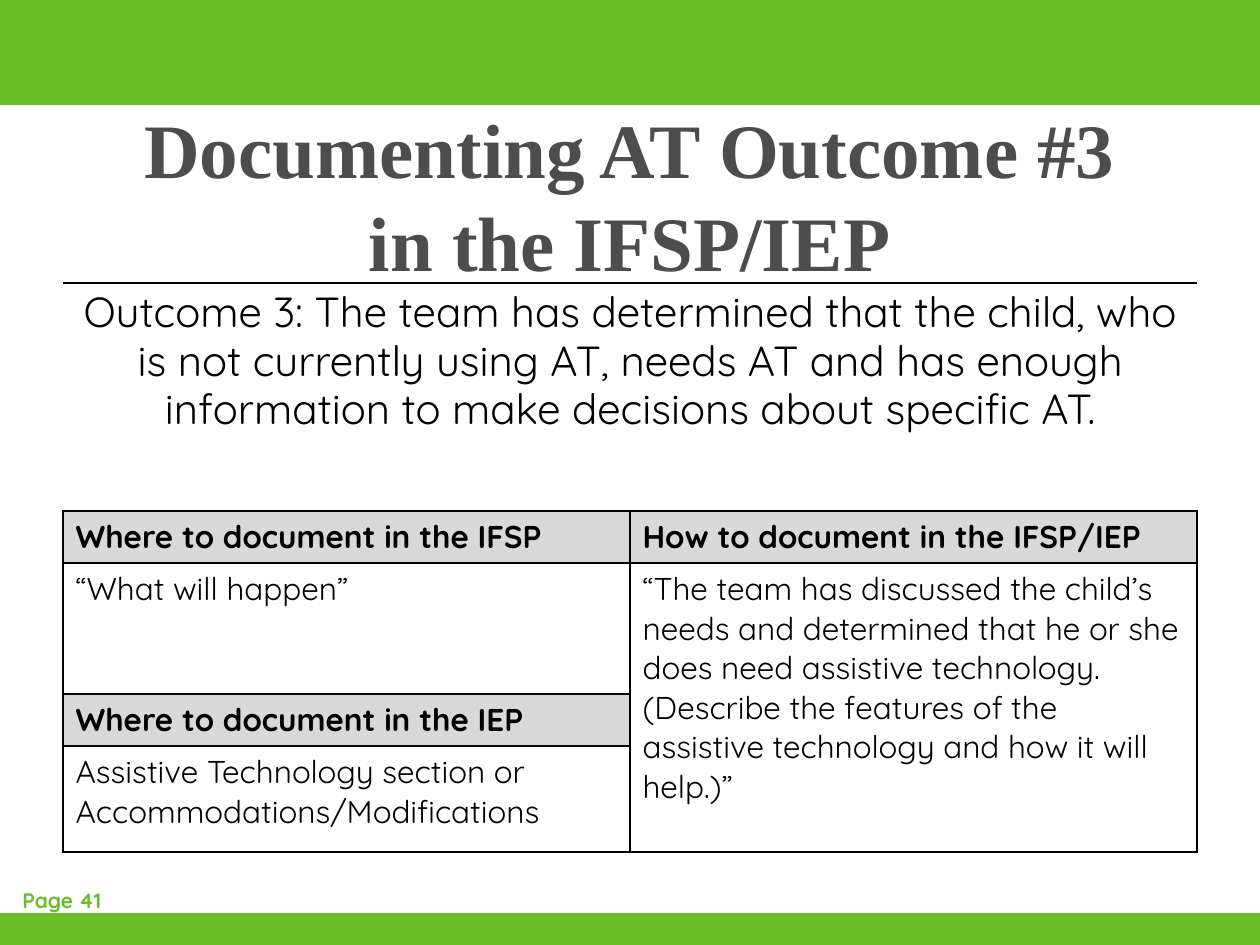
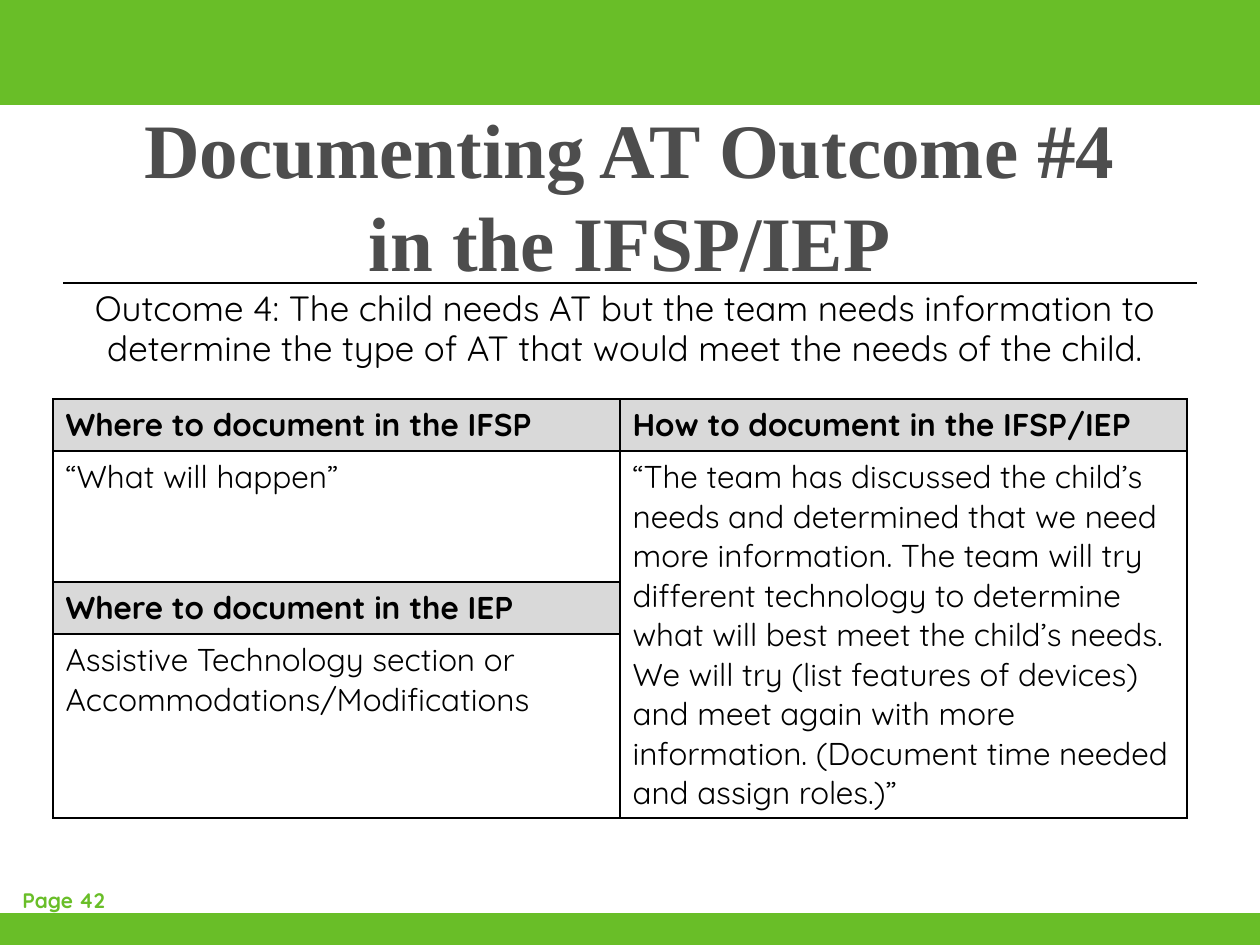
from lxml import etree
from pptx import Presentation
from pptx.dml.color import RGBColor
from pptx.enum.shapes import MSO_CONNECTOR, MSO_SHAPE
from pptx.enum.text import MSO_ANCHOR, PP_ALIGN
from pptx.oxml.ns import qn
from pptx.util import Pt

LEFT, CENTER = PP_ALIGN.LEFT, PP_ALIGN.CENTER
TOP, MIDDLE = MSO_ANCHOR.TOP, MSO_ANCHOR.MIDDLE
RECTANGLE, STRAIGHT = MSO_SHAPE.RECTANGLE, MSO_CONNECTOR.STRAIGHT

GREEN, GRAY, BLACK, HEADING_FILL = "69BE28", "4D4D4D", "000000", "D9D9D9"
BODY_FONT, TITLE_FONT = "Quicksand", "Times New Roman"
SLIDE_W, SLIDE_H = 1260, 945
TOP_BAND_H, BOTTOM_BAND_H = 105, 32
MARGIN, RULE_Y = 63, 283
COLUMN_W, HEADING_H, IFSP_H = 567, 52, 131

IFSP_HEADING = "Where to document in the IFSP"
HOW_HEADING = "How to document in the IFSP/IEP"
IEP_HEADING = "Where to document in the IEP"
IFSP_PLACE = "“What will happen”"

OUTCOMES = [
    dict(
        number=3, page=41,
        summary="Outcome 3: The team has determined that the child, who is not "
                "currently using AT, needs AT and has enough information to make "
                "decisions about specific AT.",
        summary_box=(63, RULE_Y, 1134, 210), summary_size=24,
        how="“The team has discussed the child’s needs and determined that he or "
            "she does need assistive technology. (Describe the features of the "
            "assistive technology and how it will help.)”",
        iep_place="Assistive Technology section or\nAccommodations/Modifications",
        table_at=(63, 511), iep_h=106,
    ),
    dict(
        number=4, page=42,
        summary="Outcome 4: The child needs AT but the team needs information to "
                "determine the type of AT that would meet the needs of the child.",
        summary_box=(42, RULE_Y, 1166, 179), summary_size=20,
        how="“The team has discussed the child’s needs and determined that we need "
            "more information. The team will try different technology to determine "
            "what will best meet the child’s needs. We will try (list features of "
            "devices) and meet again with more information. (Document time needed "
            "and assign roles.)”",
        iep_place="Assistive Technology section or Accommodations/Modifications",
        table_at=(53, 399), iep_h=184,
    ),
]


def px(length):
    return round(length * 914400 / 126)


def color(hex_string):
    return RGBColor.from_string(hex_string)


def write(frame, text, size=18, font=BODY_FONT, ink=BLACK, bold=False,
          align=LEFT, anchor=TOP, spacing=None):
    """Fill a text frame; a newline starts a paragraph, \\v breaks a line."""
    frame.word_wrap = True
    frame.vertical_anchor = anchor
    frame.text = text
    for paragraph in frame.paragraphs:
        paragraph.alignment = align
        paragraph.line_spacing = spacing
        for run in paragraph.runs:
            run.font.size = Pt(size)
            run.font.name = font
            run.font.bold = bold
            run.font.color.rgb = color(ink)


def add_text(slide, box, text, **text_format):
    write(slide.shapes.add_textbox(*map(px, box)).text_frame, text, **text_format)


def add_band(slide, top, height):
    band = slide.shapes.add_shape(RECTANGLE, 0, px(top), px(SLIDE_W), px(height))
    band.shadow.inherit = False
    band.fill.solid()
    band.fill.fore_color.rgb = color(GREEN)
    band.line.fill.background()


def add_frame(slide, outcome):
    """Draw the bands, title, rule and page number that every slide has."""
    add_band(slide, 0, TOP_BAND_H)
    add_band(slide, SLIDE_H - BOTTOM_BAND_H, BOTTOM_BAND_H)
    rule = slide.shapes.add_connector(
        STRAIGHT, px(MARGIN), px(RULE_Y), px(SLIDE_W - MARGIN), px(RULE_Y))
    rule.line.color.rgb = color(BLACK)
    rule.line.width = Pt(0.75)
    etree.SubElement(rule._element.spPr, qn("a:effectLst"))
    add_text(slide, (MARGIN, TOP_BAND_H, SLIDE_W - 2 * MARGIN, RULE_Y - TOP_BAND_H),
             f"Documenting AT Outcome #{outcome['number']}\vin the IFSP/IEP",
             size=44, font=TITLE_FONT, ink=GRAY, bold=True,
             align=CENTER, anchor=MIDDLE, spacing=Pt(53))
    add_text(slide, (10, 881, 693, 43), f"Page {outcome['page']}",
             size=12, ink=GREEN, bold=True)


def add_borders(cell):
    properties = cell._tc.get_or_add_tcPr()
    for side in ("a:lnL", "a:lnR", "a:lnT", "a:lnB"):
        line = etree.SubElement(properties, qn(side), w=str(Pt(1)))
        fill = etree.SubElement(line, qn("a:solidFill"))
        etree.SubElement(fill, qn("a:srgbClr"), val=BLACK)


def add_documentation_table(slide, outcome):
    rows = [
        (HEADING_H, (IFSP_HEADING, HOW_HEADING)),
        (IFSP_H, (IFSP_PLACE, outcome["how"])),
        (HEADING_H, (IEP_HEADING, "")),
        (outcome["iep_h"], (outcome["iep_place"], "")),
    ]
    headings = (IFSP_HEADING, HOW_HEADING, IEP_HEADING)
    left, top = outcome["table_at"]
    height = sum(row_h for row_h, _ in rows)
    table = slide.shapes.add_table(
        len(rows), 2, px(left), px(top), px(2 * COLUMN_W), px(height)).table
    table.first_row = table.horz_banding = False
    for row, (row_h, texts) in enumerate(rows):
        table.rows[row].height = px(row_h)
        for column, text in enumerate(texts):
            cell = table.cell(row, column)
            add_borders(cell)
            is_heading = text in headings
            if is_heading:
                cell.fill.solid()
                cell.fill.fore_color.rgb = color(HEADING_FILL)
            else:
                cell.fill.background()
            if text:
                write(cell.text_frame, text, bold=is_heading)
    table.cell(1, 1).merge(table.cell(3, 1))


def main():
    deck = Presentation()
    deck.slide_width, deck.slide_height = px(SLIDE_W), px(SLIDE_H)
    blank = deck.slide_layouts[6]
    for outcome in OUTCOMES:
        slide = deck.slides.add_slide(blank)
        add_frame(slide, outcome)
        add_text(slide, outcome["summary_box"], outcome["summary"],
                 size=outcome["summary_size"], align=CENTER, spacing=0.96)
        add_documentation_table(slide, outcome)
    deck.save("out.pptx")


if __name__ == "__main__":
    main()
